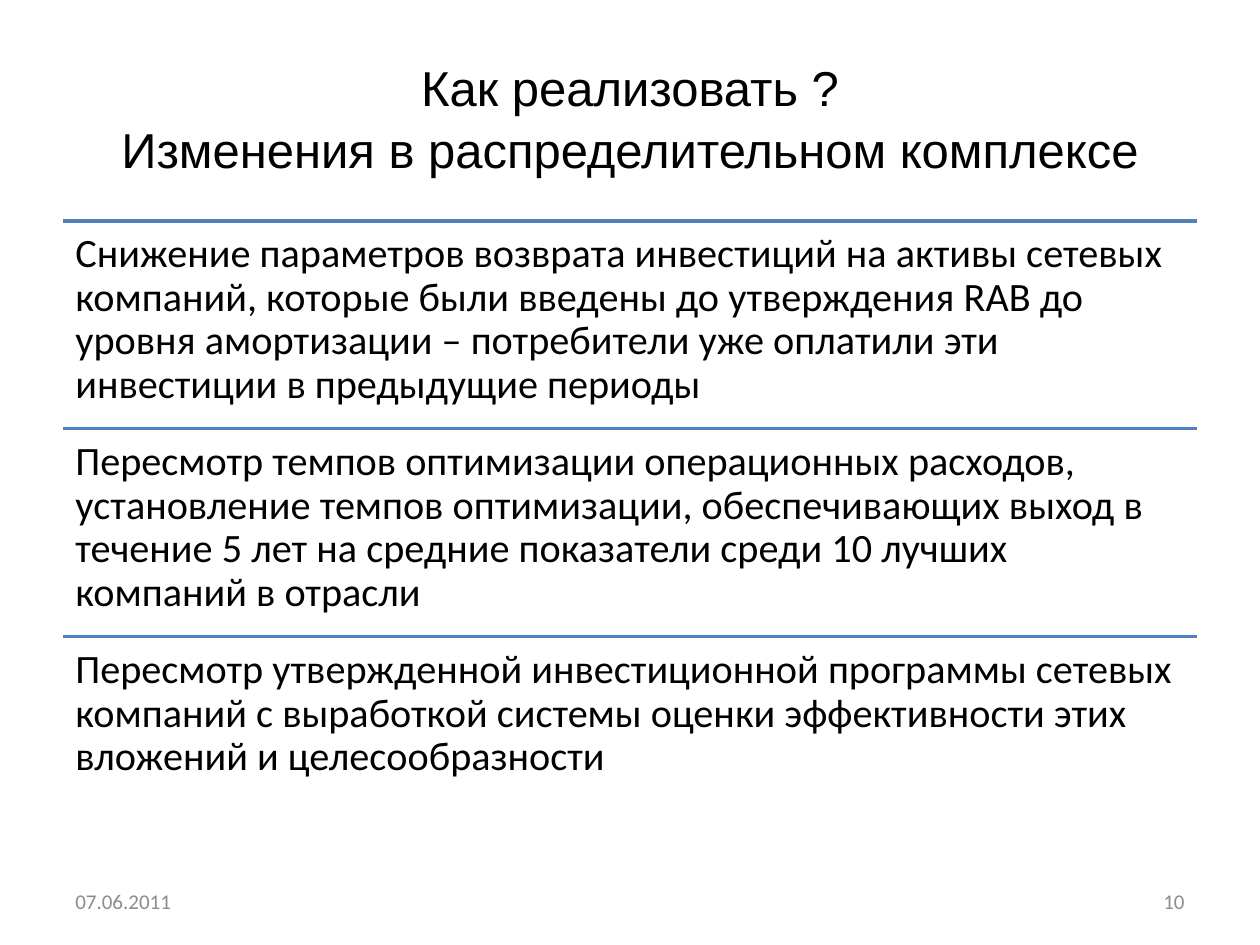
from lxml import etree
from pptx import Presentation
from pptx.dml.color import RGBColor
from pptx.enum import shapes, text
from pptx.oxml import ns
from pptx.util import Cm, Pt

# Content
TITLE = "Как реализовать ?\vИзменения в распределительном комплексе"
MEASURES = [
    "Снижение параметров возврата инвестиций на активы сетевых компаний, "
    "которые были введены до утверждения RAB до уровня амортизации – "
    "потребители уже оплатили эти инвестиции в предыдущие периоды",
    "Пересмотр темпов оптимизации операционных расходов, установление темпов "
    "оптимизации, обеспечивающих выход в течение 5 лет на средние показатели "
    "среди 10 лучших компаний в отрасли",
    "Пересмотр утвержденной инвестиционной программы сетевых компаний с "
    "выработкой системы оценки эффективности этих вложений и целесообразности",
]
DATE = "07.06.2011"
PAGE_NUMBER = "10"
COLORS = {"text": "000000", "rule": "4F81BD", "footer": "8C8C8C"}

# Layout in centimetres
PAGE_WIDTH, PAGE_HEIGHT = 25.4, 19.05
MARGIN = 1.27
CONTENT_WIDTH = PAGE_WIDTH - 2 * MARGIN
ROWS_TOP, ROW_HEIGHT = 4.45, 4.19
FOOTER_TOP, FOOTER_WIDTH, FOOTER_HEIGHT = 17.65, 5.92, 1.02

ALIGN = text.PP_ALIGN
ANCHOR = text.MSO_ANCHOR


def add_text(page, words, left, top, width, height, size, font="Calibri",
             color="text", align=ALIGN.LEFT, anchor=ANCHOR.MIDDLE, spacing=None):
    box = page.shapes.add_textbox(Cm(left), Cm(top), Cm(width), Cm(height))
    frame = box.text_frame
    frame.word_wrap = True
    frame.vertical_anchor = anchor
    frame.text = words
    paragraph = frame.paragraphs[0]
    paragraph.alignment = align
    paragraph.line_spacing = spacing
    for span in paragraph.runs:
        span.font.size = Pt(size)
        span.font.name = font
        span.font.color.rgb = RGBColor.from_string(COLORS[color])
    return box


def add_rule(page, top):
    rule = page.shapes.add_connector(
        shapes.MSO_CONNECTOR.STRAIGHT,
        Cm(MARGIN), Cm(top), Cm(MARGIN + CONTENT_WIDTH), Cm(top))
    rule.line.color.rgb = RGBColor.from_string(COLORS["rule"])
    rule.line.width = Pt(2)
    etree.SubElement(rule._element.spPr, ns.qn("a:effectLst"))


def main():
    deck = Presentation()
    deck.slide_width, deck.slide_height = Cm(PAGE_WIDTH), Cm(PAGE_HEIGHT)
    page = deck.slides.add_slide(deck.slide_layouts[6])

    # Title
    add_text(page, TITLE, MARGIN, 0.76, CONTENT_WIDTH, 3.18, 28,
             font="Arial", align=ALIGN.CENTER, spacing=1.05)

    # Measures, each under its rule
    for index, measure in enumerate(MEASURES):
        top = ROWS_TOP + index * ROW_HEIGHT
        add_rule(page, top)
        box = add_text(page, measure, MARGIN, top, CONTENT_WIDTH, ROW_HEIGHT, 23,
                       anchor=ANCHOR.TOP, spacing=0.9)
        box.text_frame.margin_top = box.text_frame.margin_bottom = Cm(0.25)

    # Footer
    right_edge = PAGE_WIDTH - MARGIN
    for words, left, align in [
        (DATE, MARGIN, ALIGN.LEFT),
        (PAGE_NUMBER, right_edge - FOOTER_WIDTH, ALIGN.RIGHT),
    ]:
        add_text(page, words, left, FOOTER_TOP, FOOTER_WIDTH, FOOTER_HEIGHT, 12,
                 color="footer", align=align)

    deck.save("out.pptx")


if __name__ == "__main__":
    main()
